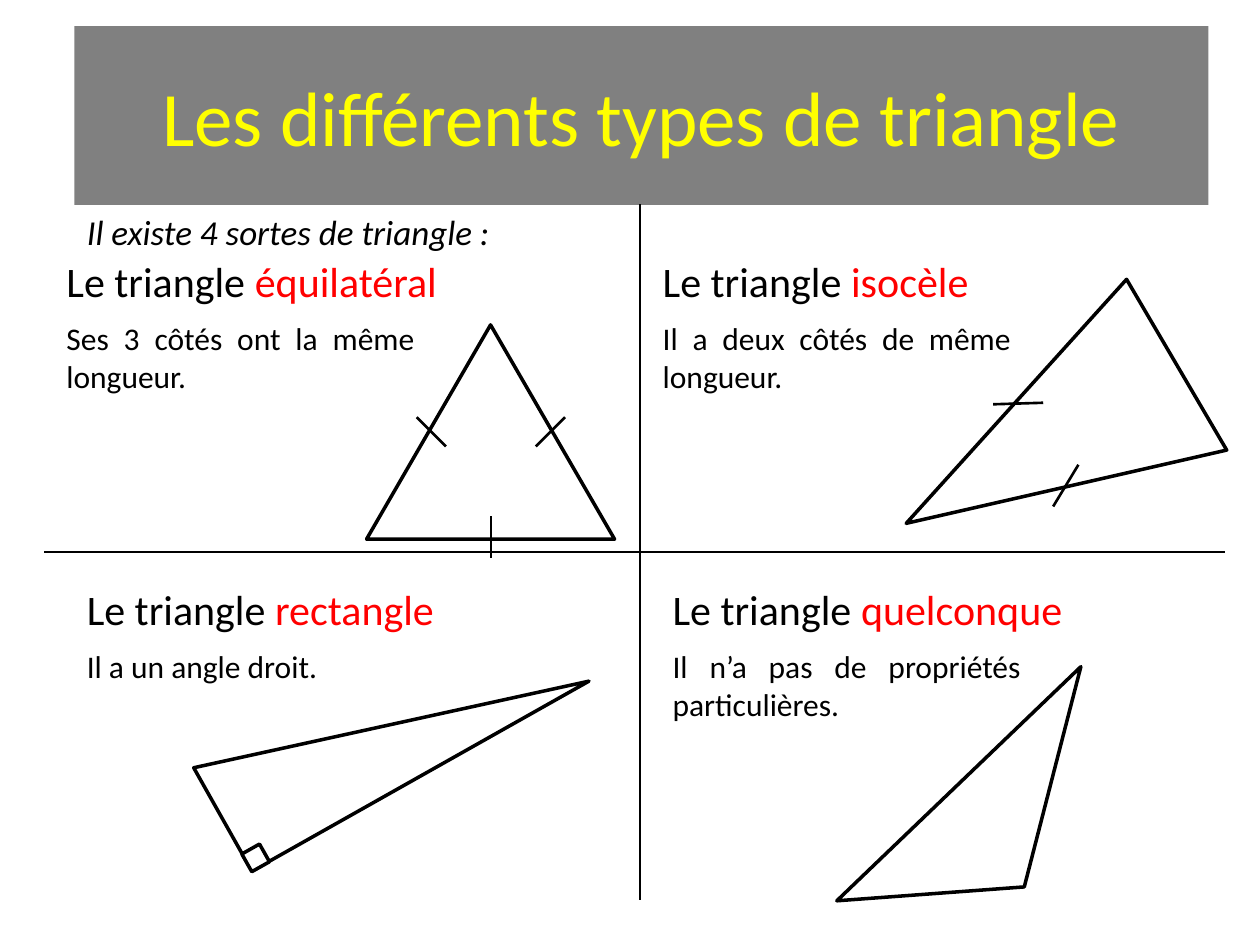
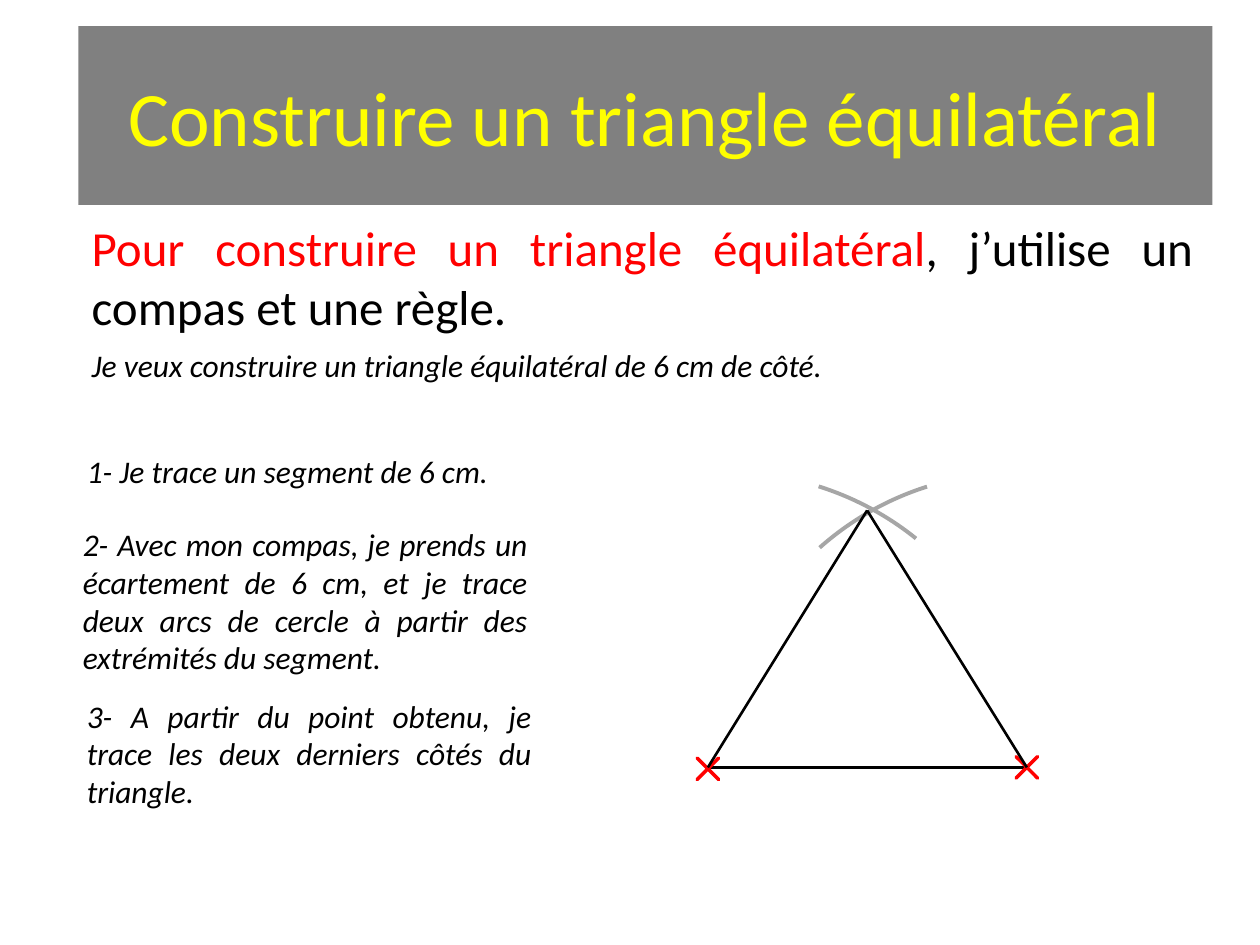
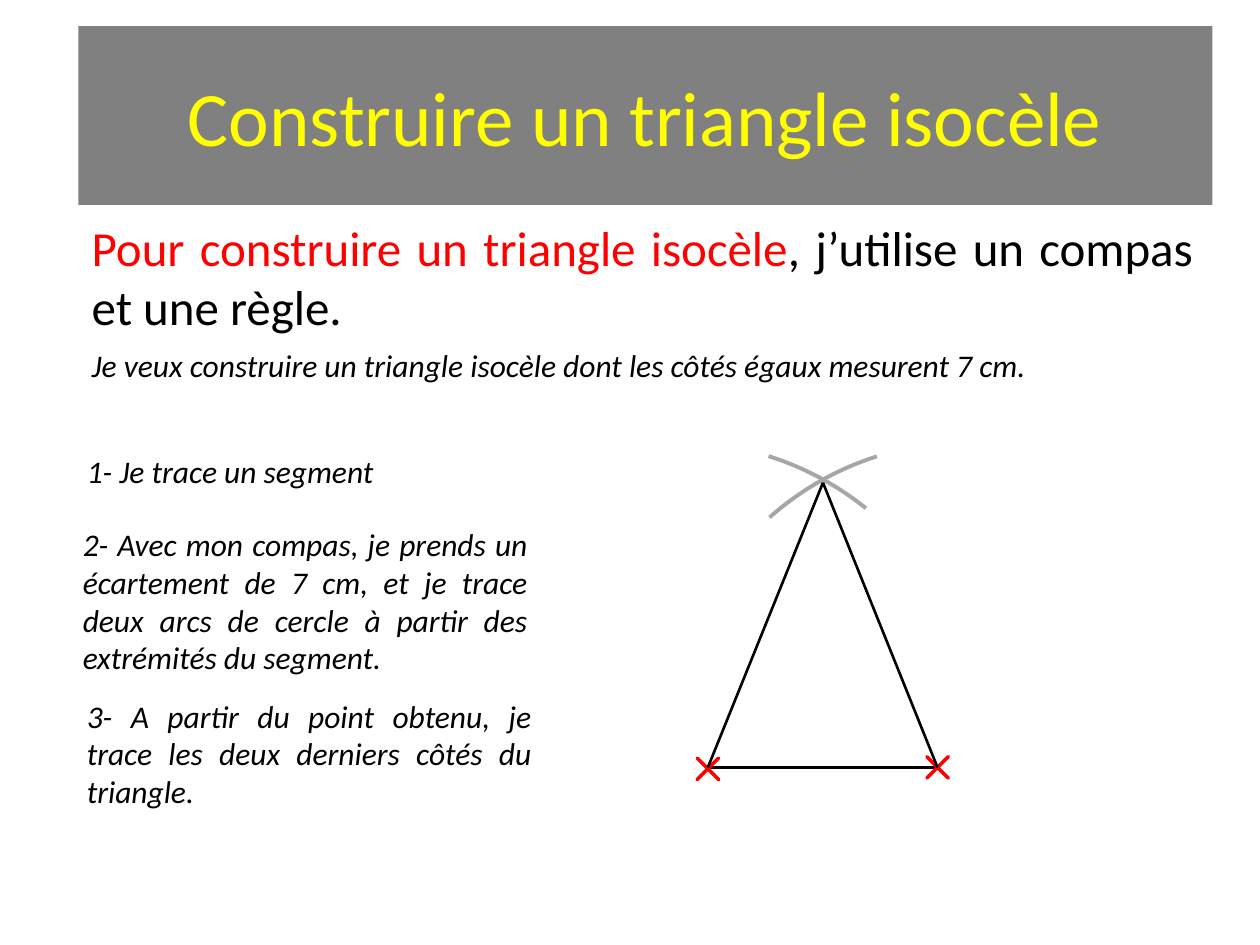
from dataclasses import dataclass

from lxml import etree
from pptx import Presentation
from pptx.dml.color import RGBColor
from pptx.enum import shapes, text
from pptx.oxml.ns import qn
from pptx.util import Cm, Pt


@dataclass(frozen=True)
class Theme:
    font: str = "Calibri"
    band: RGBColor = RGBColor(0x80, 0x80, 0x80)
    title: RGBColor = RGBColor(0xFF, 0xFF, 0x00)
    ink: RGBColor = RGBColor(0x00, 0x00, 0x00)
    accent: RGBColor = RGBColor(0xFF, 0x00, 0x00)
    paper: RGBColor = RGBColor(0xFF, 0xFF, 0xFF)
    arc: RGBColor = RGBColor(0xA6, 0xA6, 0xA6)
    title_size: int = 44
    lead_size: int = 28
    heading_size: int = 24
    intro_size: int = 20
    body_size: int = 18
    thin: float = 1.5
    thick: float = 2
    arc_width: float = 2.25


THEME = Theme()
PRESET = shapes.MSO_SHAPE
LEFT, CENTER, JUSTIFY = text.PP_ALIGN.LEFT, text.PP_ALIGN.CENTER, text.PP_ALIGN.JUSTIFY


def write(shape, runs, size, align=LEFT, italic=False):
    """Fill a shape with one paragraph made of (wording, colour) runs."""
    frame = shape.text_frame
    frame.word_wrap = True
    paragraph = frame.paragraphs[0]
    paragraph.alignment = align
    for wording, color in runs:
        run = paragraph.add_run()
        run.text = wording
        run.font.name = THEME.font
        run.font.size = Pt(size)
        run.font.italic = italic
        run.font.color.rgb = color


def add_text(slide, box, runs, size, align=JUSTIFY, italic=False):
    write(slide.shapes.add_textbox(*map(Cm, box)), runs, size, align, italic)


def style(shape, fill=None, line=None, width=THEME.thick):
    shape.shadow.inherit = False
    if fill is None:
        shape.fill.background()
    else:
        shape.fill.solid()
        shape.fill.fore_color.rgb = fill
    if line is None:
        shape.line.fill.background()
    else:
        shape.line.color.rgb = line
        shape.line.width = Pt(width)


def add_title(slide, wording, left):
    band = slide.shapes.add_shape(PRESET.RECTANGLE, *map(Cm, (left, 0.53, 22.86, 3.6)))
    style(band, THEME.band)
    write(band, [(wording, THEME.title)], THEME.title_size, CENTER)


def add_line(slide, start, end):
    line = slide.shapes.add_connector(
        shapes.MSO_CONNECTOR.STRAIGHT, *map(Cm, (*start, *end)))
    line.line.color.rgb = THEME.ink
    line.line.width = Pt(THEME.thin)
    etree.SubElement(line._element.spPr, qn("a:effectLst"))


def add_figure(slide, preset, box, rotation=0):
    figure = slide.shapes.add_shape(preset, *map(Cm, box))
    figure.rotation = rotation
    style(figure, THEME.paper, THEME.ink)


def add_polygon(slide, points):
    first, *others = [(Cm(x), Cm(y)) for x, y in points]
    builder = slide.shapes.build_freeform(*first)
    builder.add_line_segments(others, close=True)
    style(builder.convert_to_shape(), THEME.paper, THEME.ink)


def add_cross(slide, x, y, size=0.61):
    """Draw a red construction mark centred on a point."""
    cross = slide.shapes.add_shape(
        PRESET.CROSS, *map(Cm, (x - size / 2, y - size / 2, size, size)))
    cross.adjustments[0] = 0.5
    cross.rotation = 45
    style(cross, line=THEME.accent)


def add_arc(slide, left, top, start, end, diameter=11.99):
    """Draw a compass arc between two angles in degrees."""
    arc = slide.shapes.add_shape(PRESET.ARC, *map(Cm, (left, top, diameter, diameter)))
    for index, degrees in enumerate((start, end)):
        arc.adjustments[index] = degrees * 0.6  # 60000 units a degree, over 100000
    style(arc, line=THEME.arc, width=THEME.arc_width)


def add_definition(slide, left, top, kind, property_text):
    add_text(slide, (left, top, 8.71, 1.27),
             [("Le triangle ", THEME.ink), (kind, THEME.accent)],
             THEME.heading_size, LEFT)
    add_text(slide, (left, top + 1.28, 7.52, 1.8),
             [(property_text, THEME.ink)], THEME.body_size)


def add_types_slide(slide):
    add_title(slide, "Les différents types de triangle", 1.5)
    add_text(slide, (1.5, 4.12, 15, 1.12),
             [("Il existe 4 sortes de triangle :", THEME.ink)],
             THEME.intro_size, LEFT, italic=True)
    add_line(slide, (12.9, 4.12), (12.9, 18.14))
    add_line(slide, (0.89, 11.13), (24.69, 11.13))

    add_figure(slide, PRESET.ISOSCELES_TRIANGLE, (7.39, 6.55, 5, 4.32))
    add_figure(slide, PRESET.ISOSCELES_TRIANGLE, (19, 5.79, 3.99, 6.32), 239.6)
    add_figure(slide, PRESET.RIGHT_TRIANGLE, (3.99, 13.41, 7.8, 2.39), 330.6)
    add_figure(slide, PRESET.RECTANGLE, (4.95, 17.09, 0.41, 0.41), 330.6)
    add_polygon(slide, [(16.87, 18.16), (21.79, 13.44), (20.65, 17.88)])

    equal_side_marks = [
        ((8.4, 8.41), (8.99, 9)),
        ((11.39, 8.41), (10.8, 9)),
        ((9.9, 10.41), (9.9, 11.25)),
        ((21.23, 10.21), (21.74, 9.37)),
        ((20.02, 8.15), (21.03, 8.12)),
    ]
    for start, end in equal_side_marks:
        add_line(slide, start, end)

    definitions = [
        (1.09, 5.03, "équilatéral", "Ses 3 côtés ont la même longueur."),
        (13.11, 5.03, "isocèle", "Il a deux côtés de même longueur."),
        (1.5, 11.64, "rectangle", "Il a un angle droit."),
        (13.31, 11.64, "quelconque", "Il n’a pas de propriétés particulières."),
    ]
    for definition in definitions:
        add_definition(slide, *definition)


def add_construction_slide(slide, kind, goal, segment, side, right, apex, arcs_corner):
    """Explain how to build a triangle beside its compass construction."""
    add_title(slide, f"Construire un triangle {kind}", 1.58)
    add_text(slide, (1.6, 4.27, 22.7, 2.67),
             [(f"Pour construire un triangle {kind}", THEME.accent),
              (", j’utilise un compas et une règle.", THEME.ink)], THEME.lead_size)
    instructions = [
        ((1.6, 6.86, 22.5, 1.02), f"Je veux construire un triangle {kind} {goal}"),
        ((1.5, 8.99, 9, 1.02), f"1- Je trace un segment{segment}"),
        ((1.42, 10.46, 9.47, 3.33),
         f"2- Avec mon compas, je prends un écartement de {side}, et je trace "
         "deux arcs de cercle à partir des extrémités du segment."),
        ((1.5, 13.92, 9.47, 2.57),
         "3- A partir du point obtenu, je trace les deux derniers côtés du triangle."),
    ]
    for box, wording in instructions:
        add_text(slide, box, [(wording, THEME.ink)], THEME.body_size, italic=True)

    left, base = 14.27, 15.47
    add_line(slide, (left, base), (right, base))
    add_cross(slide, left, base + 0.03)
    add_cross(slide, right, base)
    arcs_left, arcs_top = arcs_corner
    add_arc(slide, arcs_left, arcs_top, 287.47, 308.86)
    add_arc(slide, arcs_left + 5.8, arcs_top, 228.4, 252.37)
    for end in (left, right):
        add_line(slide, apex, (end, base))


def main():
    presentation = Presentation()
    presentation.slide_width, presentation.slide_height = Cm(25.4), Cm(19.05)
    blank = presentation.slide_layouts[6]

    add_types_slide(presentation.slides.add_slide(blank))
    add_construction_slide(
        presentation.slides.add_slide(blank), "équilatéral", "de 6 cm de côté.",
        segment=" de 6 cm.", side="6 cm", right=20.7, apex=(17.48, 10.29),
        arcs_corner=(8.71, 9.53))
    add_construction_slide(
        presentation.slides.add_slide(blank), "isocèle",
        "dont les côtés égaux mesurent 7 cm.",
        segment="", side="7 cm", right=18.9, apex=(16.59, 9.73),
        arcs_corner=(7.7, 8.92))
    presentation.save("out.pptx")


if __name__ == "__main__":
    main()
